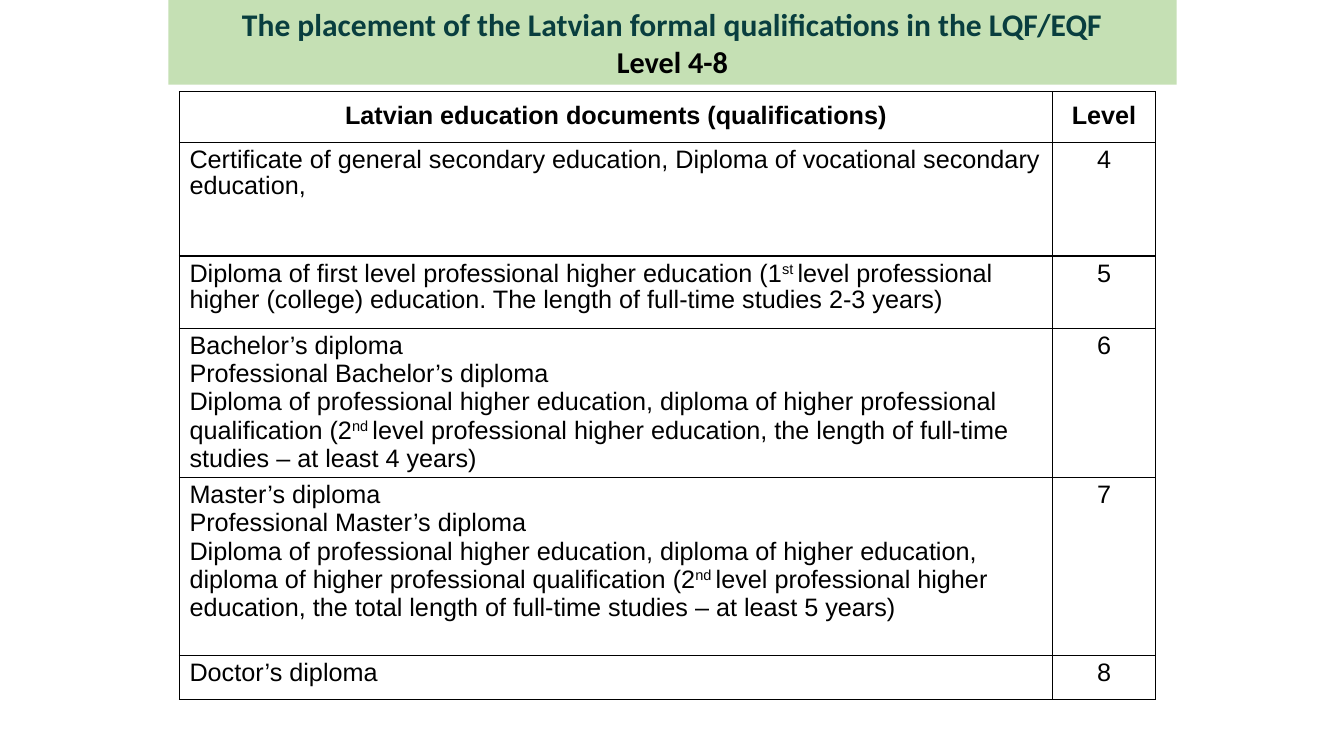
from lxml import etree
from pptx import Presentation
from pptx import util as u
from pptx.dml.color import RGBColor
from pptx.enum import shapes, text
from pptx.oxml.ns import qn

HEADINGS = ["Latvian education documents (qualifications)", "Level"]
FIRST_LEVEL = 4
QUALIFICATIONS = [
    ["Certificate of general secondary education, Diploma of vocational secondary education,"],
    ["Diploma of first level professional higher education (1^st ^level professional higher "
     "(college) education. The length of full-time studies 2-3 years)"],
    ["Bachelor’s diploma",
     "Professional Bachelor’s diploma",
     "Diploma of professional higher education, diploma of higher professional qualification "
     "(2^nd ^level professional higher education, the length of full-time studies – at least 4 years)"],
    ["Master’s diploma",
     "Professional Master’s diploma",
     "Diploma of professional higher education, diploma of higher education, diploma of higher "
     "professional qualification (2^nd ^level professional higher education, the total length of "
     "full-time studies – at least 5 years)"],
    ["Doctor’s diploma"],
]
COLUMN_WIDTHS = [8.66, 1.02]
ROW_HEIGHTS = [0.5, 1.13, 0.72, 1.42, 1.76, 0.44]


def color(hex_code):
    """Return the colour for a hex string."""
    return RGBColor.from_string(hex_code)


def add_run(paragraph, words, size, font, hex_code, bold=False):
    """Add one formatted run to a paragraph."""
    run = paragraph.add_run()
    run.text = words
    run.font.size = u.Pt(size)
    run.font.name = font
    run.font.bold = bold
    run.font.color.rgb = color(hex_code)
    return run


def add_borders(cell):
    """Draw a thin black line on every side of a cell."""
    properties = cell._tc.get_or_add_tcPr()
    for position, side in enumerate(("a:lnL", "a:lnR", "a:lnT", "a:lnB")):
        line = etree.Element(qn(side), w=str(u.Pt(1)))
        fill = etree.SubElement(line, qn("a:solidFill"))
        etree.SubElement(fill, qn("a:srgbClr"), val="000000")
        properties.insert(position, line)


def fill_cell(cell, paragraphs, centred=False, heading=False):
    """Write paragraphs in a cell, raising the words between carets."""
    cell.fill.background()
    add_borders(cell)
    cell.margin_left = cell.margin_right = u.Inches(0.1)
    cell.margin_top = cell.margin_bottom = u.Inches(0.05)
    cell.vertical_anchor = text.MSO_ANCHOR.MIDDLE if heading else text.MSO_ANCHOR.TOP
    frame = cell.text_frame
    for index, words in enumerate(paragraphs):
        paragraph = frame.add_paragraph() if index else frame.paragraphs[0]
        paragraph.alignment = text.PP_ALIGN.CENTER if centred else text.PP_ALIGN.LEFT
        if index == 0:
            paragraph.line_spacing = 0.93
        for part, piece in enumerate(words.split("^")):
            run = add_run(paragraph, piece, 18, "Arial", "000000", heading)
            if part % 2:
                run._r.get_or_add_rPr().set("baseline", "30000")


def add_title(slide, left, top, width, height):
    """Place the green title band."""
    band = slide.shapes.add_shape(
        shapes.MSO_SHAPE.RECTANGLE, *map(u.Inches, (left, top, width, height)))
    band.shadow.inherit = False
    band.fill.solid()
    band.fill.fore_color.rgb = color("C5E0B4")
    band.line.fill.background()
    frame = band.text_frame
    frame.word_wrap = True
    frame.vertical_anchor = text.MSO_ANCHOR.MIDDLE
    title = frame.paragraphs[0]
    title.alignment = text.PP_ALIGN.CENTER
    add_run(title, "The placement of the Latvian formal qualifications in the LQF/EQF",
            22.5, "Calibri", "093E3F", True)
    title.add_line_break()
    add_run(title, "Level 4-8", 21.6, "Calibri", "000000", True)


def add_levels_table(slide, left, top):
    """Place the table of qualifications and their levels."""
    box = map(u.Inches, (left, top, sum(COLUMN_WIDTHS), sum(ROW_HEIGHTS)))
    levels = slide.shapes.add_table(len(ROW_HEIGHTS), len(COLUMN_WIDTHS), *box).table
    levels.first_row = levels.horz_banding = False
    for column, width in zip(levels.columns, COLUMN_WIDTHS):
        column.width = u.Inches(width)
    for row, height in zip(levels.rows, ROW_HEIGHTS):
        row.height = u.Inches(height)
    for column, heading in enumerate(HEADINGS):
        fill_cell(levels.cell(0, column), [heading], centred=True, heading=True)
    for row, documents in enumerate(QUALIFICATIONS, 1):
        fill_cell(levels.cell(row, 0), documents)
        fill_cell(levels.cell(row, 1), [str(FIRST_LEVEL + row - 1)], centred=True)


def main():
    """Build and save the slide."""
    deck = Presentation()
    deck.slide_width, deck.slide_height = u.Inches(13.33), u.Inches(7.5)
    slide = deck.slides.add_slide(deck.slide_layouts[6])
    add_title(slide, 1.67, 0, 10, 0.84)
    add_levels_table(slide, 1.78, 0.91)
    deck.save("out.pptx")


if __name__ == "__main__":
    main()
